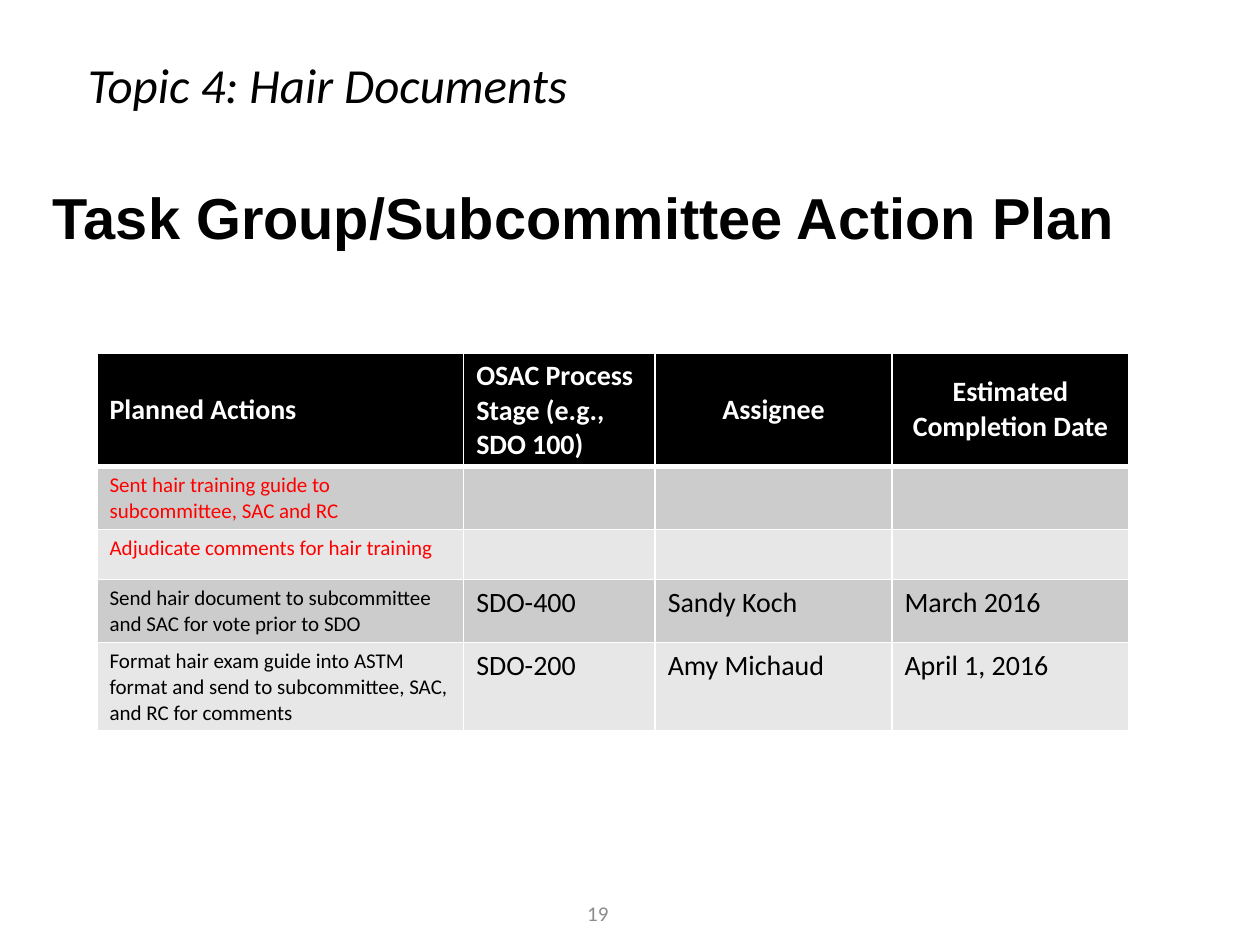
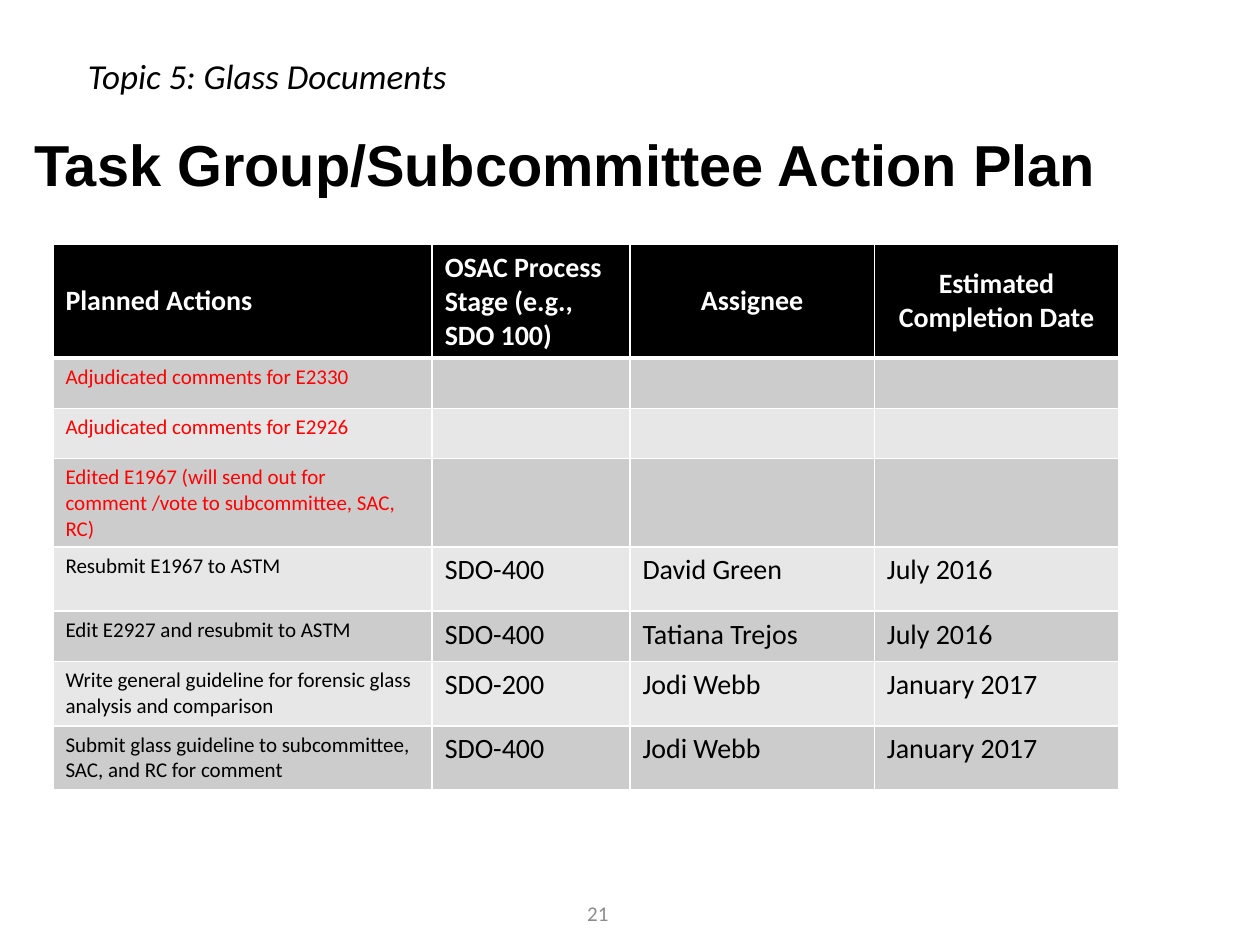
from lxml.etree import SubElement
from pptx import Presentation
from pptx.dml.color import RGBColor
from pptx.enum.text import MSO_ANCHOR, PP_ALIGN
from pptx.oxml.ns import qn
from pptx.util import Inches, Pt

BLACK = RGBColor(0x00, 0x00, 0x00)
WHITE = RGBColor(0xFF, 0xFF, 0xFF)
RED = RGBColor(0xFF, 0x00, 0x00)
GREY = RGBColor(0x8C, 0x8C, 0x8C)
BANDS = [RGBColor(0xCC, 0xCC, 0xCC), RGBColor(0xE7, 0xE7, 0xE7)]

HEADING = "Task Group/Subcommittee Action Plan"
HEADERS = ["Planned Actions", "OSAC Process Stage (e.g., SDO 100)",
           "Assignee", "Estimated Completion Date"]
HEADER_HEIGHT = 0.9

HAIR_ACTIONS = [
    (0.5, "Sent hair training guide to subcommittee, SAC and RC"),
    (0.4, "Adjudicate comments for hair training"),
    (0.5, "Send hair document to subcommittee and SAC for vote prior to SDO",
     "SDO-400", "Sandy Koch", "March 2016"),
    (0.7, "Format hair exam guide into ASTM format and send to subcommittee, "
     "SAC, and RC for comments", "SDO-200", "Amy Michaud", "April 1, 2016"),
]
GLASS_ACTIONS = [
    (0.4, "Adjudicated comments for E2330"),
    (0.4, "Adjudicated comments for E2926"),
    (0.7, "Edited E1967 (will send out for comment /vote to subcommittee, SAC, RC)"),
    (0.51, "Resubmit E1967 to ASTM", "SDO-400", "David Green", "July 2016"),
    (0.4, "Edit E2927 and resubmit to ASTM", "SDO-400", "Tatiana Trejos", "July 2016"),
    (0.51, "Write general guideline for forensic glass analysis and comparison",
     "SDO-200", "Jodi Webb", "January 2017"),
    (0.51, "Submit glass guideline to subcommittee, SAC, and RC for comment",
     "SDO-400", "Jodi Webb", "January 2017"),
]


class Deck:
    def __init__(self):
        self.prs = Presentation()
        self.prs.slide_width, self.prs.slide_height = Inches(10), Inches(7.5)
        self.slide = None

    def new_slide(self):
        self.slide = self.prs.slides.add_slide(self.prs.slide_layouts[5])

    def set_text(self, tf, text, size, color=BLACK, font="Calibri", bold=False,
                 italic=False, align=PP_ALIGN.LEFT):
        p = tf.paragraphs[0]
        p.text = text
        p.alignment = align
        p.font.name, p.font.size = font, Pt(size)
        p.font.bold, p.font.italic = bold, italic
        p.font.color.rgb = color
        return p

    def title(self, left, top):
        sp = self.slide.shapes.title
        sp.left, sp.top = Inches(left), Inches(top)
        sp.width, sp.height = Inches(10 - left), Inches(1.45)
        sp.text_frame.vertical_anchor = MSO_ANCHOR.MIDDLE
        p = self.set_text(sp.text_frame, HEADING, 33, font="Arial", bold=True)
        p.line_spacing = 0.9

    def text_box(self, left, top, width, height, text, size,
                 anchor=MSO_ANCHOR.TOP, **style):
        sp = self.slide.shapes.add_textbox(
            Inches(left), Inches(top), Inches(width), Inches(height))
        tf = sp.text_frame
        tf.word_wrap = True
        tf.vertical_anchor = anchor
        self.set_text(tf, text, size, **style)

    def topic(self, text, size, width, height):
        self.text_box(0.6, 0.38, width, height, text, size, italic=True)

    def page_number(self, number):
        self.text_box(3.62, 7.05, 2.25, 0.4, str(number), 12,
                      anchor=MSO_ANCHOR.MIDDLE, color=GREY, align=PP_ALIGN.CENTER)

    def cell(self, cell, text, fill, size, edges, **style):
        tcPr = cell._tc.get_or_add_tcPr()
        for side, width in zip("LRTB", edges):
            ln = SubElement(tcPr, qn(f"a:ln{side}"), w=str(Pt(width)))
            SubElement(SubElement(ln, qn("a:solidFill")), qn("a:srgbClr"), val=str(WHITE))
        cell.fill.solid()
        cell.fill.fore_color.rgb = fill
        self.set_text(cell.text_frame, text, size, **style)

    def action_table(self, left, top, widths, actions):
        heights = [HEADER_HEIGHT] + [action[0] for action in actions]
        table = self.slide.shapes.add_table(
            len(heights), len(widths), Inches(left), Inches(top),
            Inches(sum(widths)), Inches(sum(heights))).table
        for column, width in zip(table.columns, widths):
            column.width = Inches(width)
        for row, height in zip(table.rows, heights):
            row.height = Inches(height)
        for c, header in enumerate(HEADERS):
            cell = table.cell(0, c)
            cell.vertical_anchor = MSO_ANCHOR.MIDDLE
            self.cell(cell, header, BLACK, 16, (1, 1, 1, 3), color=WHITE, bold=True,
                      align=PP_ALIGN.LEFT if c < 2 else PP_ALIGN.CENTER)
        for r, (_, action, *details) in enumerate(actions, 1):
            color = BLACK if details else RED
            texts = [action] + (details or [""] * 3)
            for c, text in enumerate(texts):
                self.cell(table.cell(r, c), text, BANDS[(r - 1) % 2],
                          16 if c else 12, (1, 1, 3 if r == 1 else 1, 1), color=color)


def main():
    deck = Deck()

    deck.new_slide()
    deck.topic("Topic 4: Hair Documents", 28, 4.36, 0.57)
    deck.title(0.32, 1.03)
    deck.action_table(0.77, 2.8, [2.91, 1.52, 1.88, 1.88], HAIR_ACTIONS)
    deck.page_number(19)

    deck.new_slide()
    deck.topic("Topic 5: Glass Documents", 20, 5.46, 0.44)
    deck.title(0.17, 0.61)
    deck.action_table(0.42, 1.94, [3.01, 1.57, 1.94, 1.94], GLASS_ACTIONS)
    deck.page_number(21)

    deck.prs.save("out.pptx")


if __name__ == "__main__":
    main()
